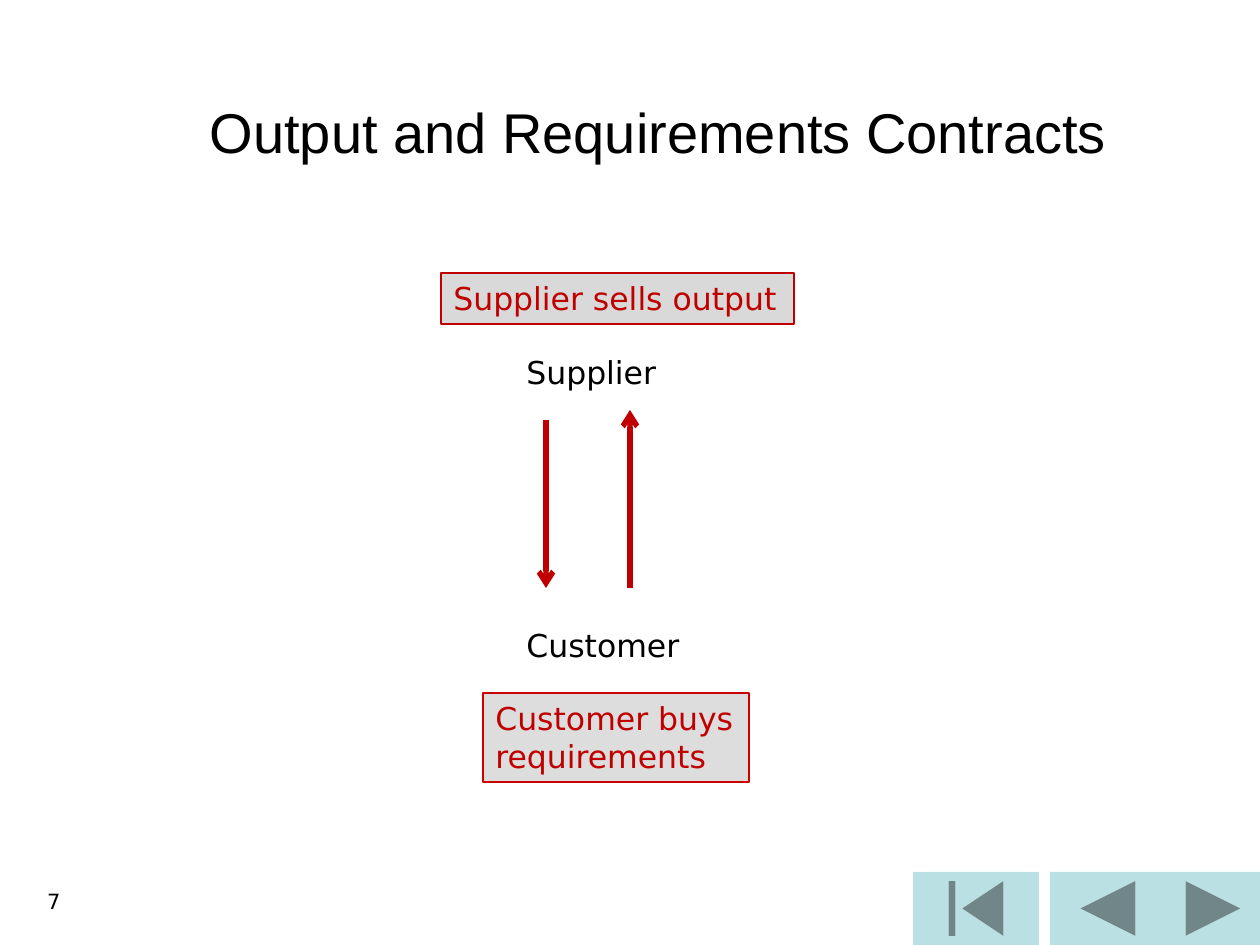
"""Build the slide on output and requirements contracts."""
from lxml.etree import SubElement
from pptx import Presentation
from pptx.dml.color import RGBColor
from pptx.enum.shapes import MSO_CONNECTOR as Connector, MSO_SHAPE as Shape
from pptx.enum.text import MSO_ANCHOR as Anchor, MSO_AUTO_SIZE as AutoSize, PP_ALIGN as Align
from pptx.oxml.ns import qn
from pptx.util import Pt

PX = 914400 // 126
RED = "C00000"


def color(value):
    return RGBColor.from_string(value)


def write(box, text, size=18, font="DejaVu Sans", ink="000000",
          align=Align.LEFT, anchor=Anchor.TOP, wrap=True, fit=AutoSize.NONE):
    frame = box.text_frame
    frame.text = text
    frame.word_wrap = wrap
    frame.auto_size = fit
    frame.vertical_anchor = anchor
    for para in frame.paragraphs:
        para.alignment = align
        para.font.size = Pt(size)
        para.font.name = font
        para.font.color.rgb = color(ink)


deck = Presentation()
deck.slide_width, deck.slide_height = 1260 * PX, 945 * PX
page = deck.slides.add_slide(deck.slide_layouts[6])

for preset, left, width in [
    (Shape.ACTION_BUTTON_BACK_OR_PREVIOUS, 1050, 116),
    (Shape.ACTION_BUTTON_BEGINNING, 913, 126),
    (Shape.ACTION_BUTTON_FORWARD_OR_NEXT, 1166, 94),
]:
    button = page.shapes.add_shape(preset, left * PX, 872 * PX, width * PX, 73 * PX)
    button.shadow.inherit = False
    button.fill.solid()
    button.fill.fore_color.rgb = color("BBE0E3")
    button.line.fill.background()

title = page.shapes.add_textbox(79 * PX, 42 * PX, 1159 * PX, 179 * PX)
write(title, "Output and Requirements Contracts", size=32, font="Arial",
      align=Align.CENTER, anchor=Anchor.MIDDLE)

number = page.shapes.add_textbox(-189 * PX, 882 * PX, 262 * PX, 63 * PX)
write(number, "7", size=12, align=Align.RIGHT)

for name, top, width, wrap in [("Supplier", 347, 158, True), ("Customer", 620, 180, False)]:
    party = page.shapes.add_textbox(514 * PX, top * PX, width * PX, 51 * PX)
    write(party, name, wrap=wrap, fit=AutoSize.SHAPE_TO_FIT_TEXT)

for x, start, end in [(630, 588, 410), (546, 420, 588)]:
    arrow = page.shapes.add_connector(Connector.STRAIGHT, x * PX, start * PX, x * PX, end * PX)
    arrow.line.color.rgb = color(RED)
    arrow.line.width = Pt(3)
    SubElement(arrow.line._get_or_add_ln(), qn("a:tailEnd"), type="arrow")
    SubElement(arrow._element.spPr, qn("a:effectLst"))

for text, left, top, width, height, fill, edge in [
    ("Supplier sells output", 441, 273, 353, 51, "D9D9D9", RED),
    ("Customer buys\nrequirements", 483, 693, 266, 89, "DDDDDD", "CC0000"),
]:
    label = page.shapes.add_shape(Shape.RECTANGLE, left * PX, top * PX, width * PX, height * PX)
    label.shadow.inherit = False
    label.fill.solid()
    label.fill.fore_color.rgb = color(fill)
    label.line.color.rgb = color(edge)
    label.line.width = Pt(0.75)
    write(label, text, ink=RED, wrap=False, fit=AutoSize.SHAPE_TO_FIT_TEXT)

deck.save("out.pptx")
